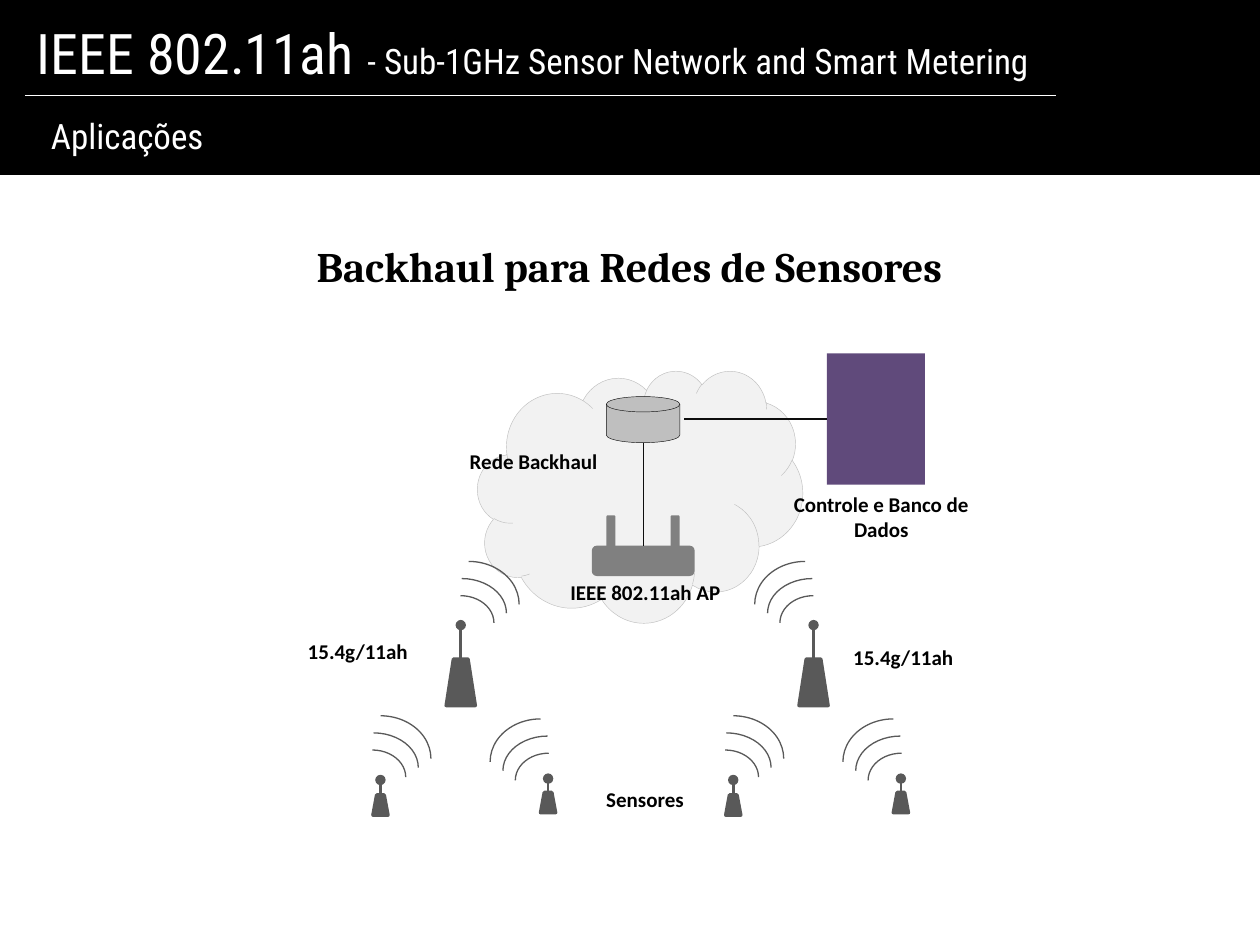
from dataclasses import dataclass
from typing import Optional

from lxml import etree
from pptx import Presentation
from pptx.dml.color import RGBColor
from pptx.enum.shapes import MSO_CONNECTOR, MSO_SHAPE
from pptx.enum.text import MSO_ANCHOR, MSO_AUTO_SIZE, PP_ALIGN
from pptx.oxml.ns import qn
from pptx.util import Pt

STRAIGHT = MSO_CONNECTOR.STRAIGHT
ARC, CLOUD, DISK = MSO_SHAPE.ARC, MSO_SHAPE.CLOUD, MSO_SHAPE.FLOWCHART_MAGNETIC_DISK
RECT, ROUNDED, TRAPEZOID = MSO_SHAPE.RECTANGLE, MSO_SHAPE.ROUNDED_RECTANGLE, MSO_SHAPE.TRAPEZOID
MIDDLE, FIT_SHAPE = MSO_ANCHOR.MIDDLE, MSO_AUTO_SIZE.SHAPE_TO_FIT_TEXT
LEFT, CENTER = PP_ALIGN.LEFT, PP_ALIGN.CENTER

BLACK, WHITE, INK = "000000", "FFFFFF", "0D0D0D"
DARK_GRAY, GRAY, SILVER, PALE = "595959", "808080", "BFBFBF", "F2F2F2"
PURPLE = "604A7B"
CLUSTER_STEP = 201.6
INNER_WAVE_WIDTH = 38.2
LABEL_FONT = {"name": "Calibri", "size": Pt(12), "bold": True}
HEADING_FONT = {"name": "Cambria", "size": Pt(24), "bold": True}
TITLE_FONT = {"name": "Roboto Condensed", "size": Pt(32)}
SUBTITLE_FONT = {"name": "Roboto Condensed", "size": Pt(20)}


@dataclass(frozen=True)
class Box:
    left: float
    top: float
    width: float
    height: float

    def lengths(self):
        return [Pt(v) for v in (self.left, self.top, self.width, self.height)]


@dataclass(frozen=True)
class Antenna:
    center: float
    top: float
    width: float
    height: float
    mast: float


@dataclass(frozen=True)
class Signal:
    left: float
    top: float
    flipped: bool


@dataclass(frozen=True)
class Label:
    text: str
    box: Box
    font: dict


WAVES = [
    Box(0, 0, INNER_WAVE_WIDTH, 31),
    Box(-5.8, -9.8, 51.1, 39.6),
    Box(-5, -19.6, 57.6, 49),
]
ANTENNAS = [
    Antenna(263.3, 376.6, 16.6, 26.6, 19.4),
    Antenna(217.4, 454.3, 8.6, 11.5, 8.6),
    Antenna(313.2, 452.9, 8.6, 11.5, 8),
]
LABELS = [
    Label("Controle e Banco de Dados", Box(440.6, 277.2, 126, 36), LABEL_FONT),
    Label("Rede Backhaul", Box(241.9, 252.7, 126, 21.6), LABEL_FONT),
    Label(" IEEE 802.11ah AP", Box(300.2, 327.6, 134.6, 21.6), LABEL_FONT),
    Label(" 15.4g/11ah", Box(153.4, 361.4, 99.4, 21.6), LABEL_FONT),
    Label(" 15.4g/11ah", Box(465.1, 365, 99.4, 21.6), LABEL_FONT),
    Label(" Sensores", Box(317.5, 445.7, 99.4, 21.6), LABEL_FONT),
    Label("Backhaul para Redes de Sensores", Box(167, 133.9, 385.2, 36), HEADING_FONT),
]


def color(hex_code: str) -> RGBColor:
    return RGBColor.from_string(hex_code)


def apply_format(target, values: dict) -> None:
    for attribute, value in values.items():
        setattr(target, attribute, value)


def add_figure(slide, kind, box: Box, fill: Optional[str] = None,
               outline: Optional[str] = None, weight: float = 0):
    figure = slide.shapes.add_shape(kind, *box.lengths())
    figure.shadow.inherit = False
    if fill:
        figure.fill.solid()
        figure.fill.fore_color.rgb = color(fill)
    else:
        figure.fill.background()
    if outline:
        figure.line.color.rgb = color(outline)
        figure.line.width = Pt(weight)
    else:
        figure.line.fill.background()
    return figure


def add_link(slide, start: tuple, end: tuple, ink: str, weight: float = 0.75):
    link = slide.shapes.add_connector(STRAIGHT, *[Pt(v) for v in start + end])
    link.line.color.rgb = color(ink)
    link.line.width = Pt(weight)
    etree.SubElement(link._element.spPr, qn("a:effectLst"))
    return link


def add_antenna(slide, antenna: Antenna, shift: float) -> None:
    center = antenna.center + shift
    base = Box(center - antenna.width / 2, antenna.top, antenna.width, antenna.height)
    add_figure(slide, TRAPEZOID, base, DARK_GRAY, DARK_GRAY, 2)
    mast = add_link(slide, (center, antenna.top), (center, antenna.top - antenna.mast),
                    DARK_GRAY, 1.5)
    etree.SubElement(mast.line._get_or_add_ln(), qn("a:tailEnd"), type="oval")


def add_signal(slide, signal: Signal, shift: float) -> None:
    for wave in WAVES:
        offset = INNER_WAVE_WIDTH - wave.left - wave.width if signal.flipped else wave.left
        box = Box(signal.left + shift + offset, signal.top + wave.top, wave.width, wave.height)
        arc = add_figure(slide, ARC, box, None, DARK_GRAY, 0.75)
        if signal.flipped:
            arc._element.spPr.get_or_add_xfrm().set("flipH", "1")


def add_cluster(slide, shift: float, tower_flipped: bool) -> None:
    for antenna in ANTENNAS:
        add_antenna(slide, antenna, shift)
    for signal in (Signal(193.7, 428.6, False), Signal(294.5, 430.4, True),
                   Signal(244.1, 340.4, tower_flipped)):
        add_signal(slide, signal, shift)


def add_run(paragraph, text: str, font: dict, ink: str) -> None:
    run = paragraph.add_run()
    run.text = text
    apply_format(run.font, font)
    run.font.color.rgb = color(ink)


def add_label(slide, label: Label) -> None:
    frame = slide.shapes.add_textbox(*label.box.lengths()).text_frame
    apply_format(frame, {"word_wrap": True, "auto_size": FIT_SHAPE})
    paragraph = frame.paragraphs[0]
    paragraph.alignment = CENTER
    add_run(paragraph, label.text, label.font, BLACK)


def add_header(slide) -> None:
    frame = add_figure(slide, RECT, Box(0, 0, 720, 100), BLACK).text_frame
    apply_format(frame, {"word_wrap": True, "vertical_anchor": MIDDLE})
    title, section = frame.paragraphs[0], frame.add_paragraph()
    section.space_before = Pt(16.4)
    for paragraph, indent in ((title, 14), (section, 22)):
        paragraph.alignment = LEFT
        paragraph._p.get_or_add_pPr().set("marL", str(Pt(indent)))
    add_run(title, "IEEE 802.11ah ", TITLE_FONT, WHITE)
    add_run(title, "- Sub-1GHz Sensor Network and Smart Metering", SUBTITLE_FONT, WHITE)
    add_run(section, "Aplicações", SUBTITLE_FONT, WHITE)
    add_link(slide, (14.4, 54.7), (603.4, 54.7), WHITE)


def add_backhaul(slide) -> None:
    add_figure(slide, CLOUD, Box(272.9, 211.7, 185.8, 144), PALE, SILVER, 0.25)
    add_figure(slide, DISK, Box(346.5, 226.6, 42, 26.4), SILVER, INK, 0.25)
    for left in (346.5, 383.2):
        add_figure(slide, ROUNDED, Box(left, 294.5, 5.2, 26.6), GRAY)
    access_point = add_figure(slide, ROUNDED, Box(338.2, 311.8, 58.8, 17.4), GRAY)
    server = add_figure(slide, RECT, Box(472.5, 202, 56, 75), PURPLE)
    add_link(slide, (367.6, 253), (367.6, 311.8), INK).end_connect(access_point, 0)
    add_link(slide, (391, 239.5), (472.5, 239.5), INK).end_connect(server, 1)


def main() -> None:
    deck = Presentation()
    apply_format(deck, {"slide_width": Pt(720), "slide_height": Pt(540)})
    slide = deck.slides.add_slide(deck.slide_layouts[6])
    add_backhaul(slide)
    add_cluster(slide, 0, False)
    add_cluster(slide, CLUSTER_STEP, True)
    for label in LABELS:
        add_label(slide, label)
    add_header(slide)
    deck.save("out.pptx")


if __name__ == "__main__":
    main()
